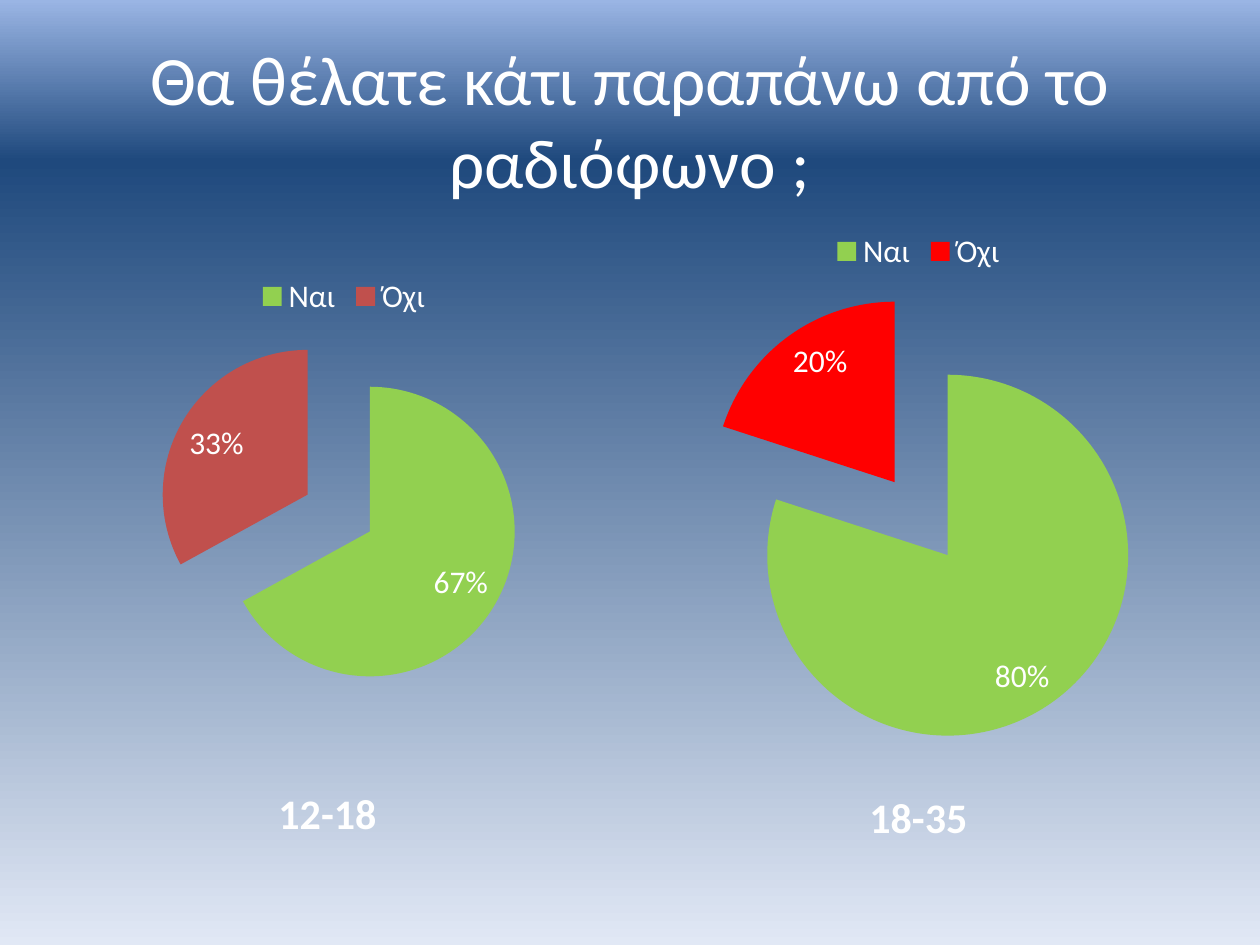
from lxml.etree import SubElement
from pptx import Presentation
from pptx.chart.data import CategoryChartData
from pptx.dml.color import RGBColor
from pptx.enum.chart import XL_CHART_TYPE, XL_LABEL_POSITION, XL_LEGEND_POSITION
from pptx.enum.text import MSO_ANCHOR, PP_ALIGN
from pptx.oxml import parse_xml
from pptx.oxml.ns import nsdecls, qn
from pptx.util import Cm, Pt

FONT = "Calibri"
COLORS = {
    "text": "FFFFFF",
    "yes": "92D050",
    "no_muted": "C0504D",
    "no_bright": "FF0000",
    "sky": "9AB5E4",
    "navy": "1F497D",
    "mist": "E1E8F5",
}
BACKGROUND_STOPS = ((0, "sky"), (17, "navy"), (100, "mist"))
COLUMN_WIDTH, CHART_HEIGHT, LABEL_HEIGHT = 11.23, 10.97, 1.78


def rgb(name):
    return RGBColor.from_string(COLORS[name])


def paint_background(page):
    """Fill the page with a vertical gradient of three stops."""
    fill = page.background.fill
    fill.gradient()
    fill.gradient_angle = 270
    stops = fill.gradient_stops._gsLst if hasattr(fill.gradient_stops, "_gsLst") else None
    if stops is None:
        stops = next(page.element.iter(qn("a:gsLst")))
    for stop in list(stops):
        stops.remove(stop)
    for percent, name in BACKGROUND_STOPS:
        stops.append(parse_xml(
            f'<a:gs {nsdecls("a")} pos="{percent * 1000}">'
            f'<a:srgbClr val="{COLORS[name]}"/></a:gs>'))


def add_text(page, text, box, size, bold=False, anchor=MSO_ANCHOR.MIDDLE, shift=0):
    """Add centred text; shift moves its centre to the left."""
    frame = page.shapes.add_textbox(*(Cm(length) for length in box)).text_frame
    frame.word_wrap = True
    frame.vertical_anchor = anchor
    frame.margin_right += Cm(2 * shift)
    para = frame.paragraphs[0]
    para.alignment = PP_ALIGN.CENTER
    span = para.add_run()
    span.text = text
    span.font.name = FONT
    span.font.size = Pt(size)
    span.font.bold = bold
    span.font.color.rgb = rgb("text")


def set_layout(parent, before, **fractions):
    """Place a chart part by fractions of the chart's size."""
    for old in parent.findall(qn("c:layout")):
        parent.remove(old)
    layout = parse_xml(f'<c:layout {nsdecls("c")}><c:manualLayout/></c:layout>')
    manual = layout[0]
    if "w" in fractions:
        SubElement(manual, qn("c:layoutTarget")).set("val", "inner")
    for axis in "xy":
        SubElement(manual, qn(f"c:{axis}Mode")).set("val", "edge")
    for key, value in fractions.items():
        SubElement(manual, qn(f"c:{key}")).set("val", str(value))
    if before is None:
        parent.insert(0, layout)
    else:
        parent.find(qn(before)).addnext(layout)


def add_pie(page, box, answers, colors, plot, legend_at=None):
    data = CategoryChartData(number_format="General")
    data.categories = list(answers)
    data.add_series("Απαντήσεις", list(answers.values()))
    chart = page.shapes.add_chart(
        XL_CHART_TYPE.PIE, *(Cm(length) for length in box), data).chart
    chart.has_title = False
    chart.font.name = FONT
    chart.font.size = Pt(18)
    chart.font.color.rgb = rgb("text")

    chart.has_legend = True
    chart.legend.position = XL_LEGEND_POSITION.TOP
    chart.legend.include_in_layout = False
    if legend_at:
        set_layout(chart.legend._element, "c:legendPos", **legend_at)
    plot_area = next(chart.element.iter(qn("c:plotArea")))
    set_layout(plot_area, None, **plot)

    pie = chart.plots[0]
    pie.vary_by_categories = True
    pie.has_data_labels = True
    labels = pie.data_labels
    labels.show_percentage = True
    labels.show_value = False
    labels.number_format = "0%"
    labels.number_format_is_linked = False
    labels.position = XL_LABEL_POSITION.INSIDE_END

    series = pie.series[0]
    for index, name in enumerate(colors):
        fill = series.points[index].format.fill
        fill.solid()
        fill.fore_color.rgb = rgb(name)
    explosion = parse_xml(f'<c:explosion {nsdecls("c")} val="25"/>')
    series._element.find(qn("c:dPt")).addprevious(explosion)


def add_age_group(page, left, chart_top, label_top, age, shift=0, **pie):
    """Add one column: a pie chart with its age range below."""
    add_pie(page, (left, chart_top, COLUMN_WIDTH, CHART_HEIGHT), **pie)
    add_text(page, age, (left, label_top, COLUMN_WIDTH, LABEL_HEIGHT), 24,
             bold=True, anchor=MSO_ANCHOR.BOTTOM, shift=shift)


def main():
    deck = Presentation()
    deck.slide_width, deck.slide_height = Cm(25.4), Cm(19.05)
    page = deck.slides.add_slide(deck.slide_layouts[6])
    paint_background(page)
    add_text(page, "Θα θέλατε κάτι παραπάνω από το ραδιόφωνο ;",
             (1.27, 0.81, 22.86, 3.18), 39.6)
    add_age_group(page, 1.27, 3.38, 15.24, "12-18", shift=0.28,
                  answers={"Nαι": 67, "Όχι": 33}, colors=("yes", "no_muted"),
                  plot={"x": 0.17, "y": 0.3, "w": 0.65, "h": 0.67},
                  legend_at={"x": 0.34, "y": 0.19})
    add_age_group(page, 12.9, 4.37, 15.32, "18-35",
                  answers={"Ναι": 80, "Όχι": 20}, colors=("yes", "no_bright"),
                  plot={"x": 0.1, "y": 0.14, "w": 0.81, "h": 0.83})
    deck.save("out.pptx")


if __name__ == "__main__":
    main()
